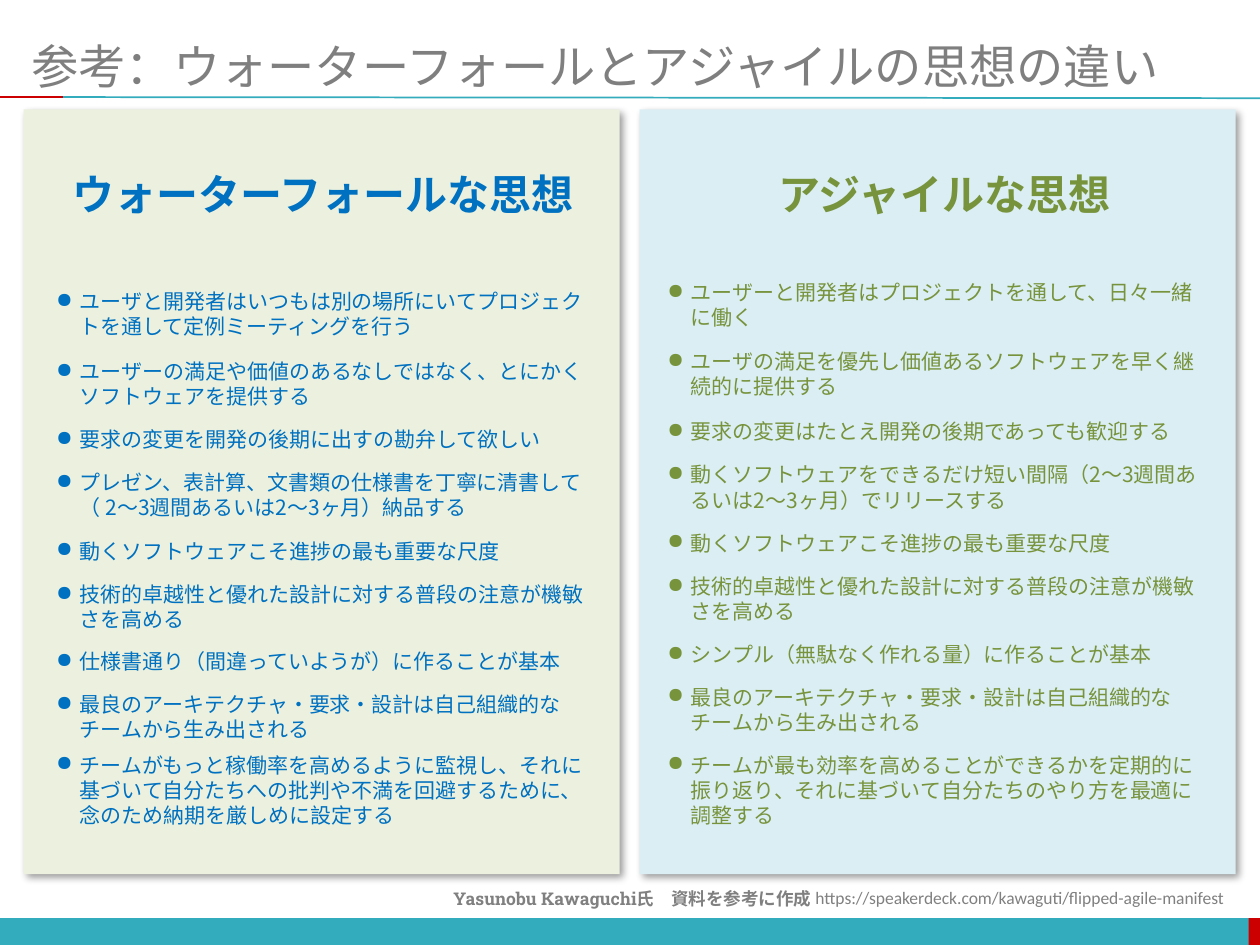
from dataclasses import dataclass

from lxml import etree
from pptx import Presentation
from pptx.dml.color import RGBColor
from pptx.enum import shapes, text
from pptx.oxml import ns
from pptx.util import Pt


@dataclass(frozen=True)
class Theme:
    teal: str = "33ACBD"
    red: str = "CC0000"
    title: str = "7F7F7F"
    source: str = "808080"
    waterfall: str = "0070C0"
    waterfall_fill: str = "EBF1DE"
    agile: str = "77933C"
    agile_fill: str = "DBEEF4"
    font: str = "Noto Sans CJK JP"
    title_size: float = 27
    heading_size: float = 24
    body_size: float = 12
    source_size: float = 10


T = Theme()
LEFT, CENTER, RIGHT = text.PP_ALIGN.LEFT, text.PP_ALIGN.CENTER, text.PP_ALIGN.RIGHT


def add_text(parent, box, words, size, color, font=T.font, bold=False,
             align=LEFT, wrap=True, bullet=False, spacing=1.2):
    sp = parent.add_textbox(*map(Pt, box))
    tf = sp.text_frame
    tf.word_wrap = wrap
    tf.text = words
    p = tf.paragraphs[0]
    p.alignment = align
    if spacing:
        p.line_spacing = Pt(spacing * size)
    if bullet:
        pPr = p._p.get_or_add_pPr()
        pPr.set("marL", str(Pt(13.5)))
        pPr.set("indent", str(-Pt(13.5)))
        etree.SubElement(pPr, ns.qn("a:buChar"), char="●")
    r = p.runs[0]
    r.font.size = Pt(size)
    r.font.bold = bold
    r.font.name = font
    r.font.color.rgb = RGBColor.from_string(color)
    etree.SubElement(r._r.get_or_add_rPr(), ns.qn("a:ea"), typeface=T.font)
    return tf


def add_rect(parent, box, color):
    sp = parent.add_shape(shapes.MSO_SHAPE.RECTANGLE, *map(Pt, box))
    sp.shadow.inherit = False
    sp.fill.solid()
    sp.fill.fore_color.rgb = RGBColor.from_string(color)
    sp.line.fill.background()
    return sp


prs = Presentation()
prs.slide_width, prs.slide_height = Pt(720), Pt(540)
s = prs.slides.add_slide(prs.slide_layouts[6])

# Footer band and the rule under the title
add_rect(s.shapes, (0, 524.7, 720, 15.5), T.teal)
add_rect(s.shapes, (713.5, 524.7, 6.5, 15.5), T.red)
for x1, x2, y2, color in ((36, 720, 56.1, T.teal), (0, 36, 55.5, T.red)):
    rule = s.shapes.add_connector(shapes.MSO_CONNECTOR.STRAIGHT,
                                  Pt(x1), Pt(55.5), Pt(x2), Pt(y2))
    rule.line.color.rgb = RGBColor.from_string(color)
    rule.line.width = Pt(1)
    etree.SubElement(rule._element.spPr, ns.qn("a:effectLst"))

tf = add_text(s.shapes, (18, 21, 684, 33), "参考：ウォーターフォールとアジャイルの思想の違い",
              T.title_size, T.title, spacing=None)
tf.margin_left = tf.margin_right = 0
tf.vertical_anchor = text.MSO_ANCHOR.MIDDLE

waterfall = [
    (161.3, "ユーザと開発者はいつもは別の場所にいてプロジェクトを通して定例ミーティングを行う"),
    (201.4, "ユーザーの満足や価値のあるなしではなく、とにかくソフトウェアを提供する"),
    (240.3, "要求の変更を開発の後期に出すの勘弁して欲しい"),
    (264.8, "プレゼン、表計算、文書類の仕様書を丁寧に清書して（ 2〜3週間あるいは2〜3ヶ月）納品する"),
    (304, "動くソフトウェアこそ進捗の最も重要な尺度"),
    (328.8, "技術的卓越性と優れた設計に対する普段の注意が機敏さを高める"),
    (367.3, "仕様書通り（間違っていようが）に作ることが基本"),
    (391.8, "最良のアーキテクチャ・要求・設計は自己組織的なチームから生み出される"),
    (426.3, "チームがもっと稼働率を高めるように監視し、それに基づいて自分たちへの批判や不満を"
            "回避するために、念のため納期を厳しめに設定する"),
]
agile = [
    (156.2, "ユーザーと開発者はプロジェクトを通して、日々一緒に働く"),
    (195.8, "ユーザの満足を優先し価値あるソフトウェアを早く継続的に提供する"),
    (235.6, "要求の変更はたとえ開発の後期であっても歓迎する"),
    (260.4, "動くソフトウェアをできるだけ短い間隔（2〜3週間あるいは2〜3ヶ月）でリリースする"),
    (299.5, "動くソフトウェアこそ進捗の最も重要な尺度"),
    (324.2, "技術的卓越性と優れた設計に対する普段の注意が機敏さを高める"),
    (363, "シンプル（無駄なく作れる量）に作ることが基本"),
    (387.4, "最良のアーキテクチャ・要求・設計は自己組織的なチームから生み出される"),
    (426.3, "チームが最も効率を高めることができるかを定期的に振り返り、それに基づいて自分たちの"
            "やり方を最適に調整する"),
]
panels = [
    (s.shapes, 13.5, 25, 184.5, "ウォーターフォールな思想", waterfall, T.waterfall, T.waterfall_fill),
    (s.shapes.add_group_shape().shapes, 365.5, 374.3, 539.6, "アジャイルな思想", agile, T.agile, T.agile_fill),
]
heading_width = 306
chars_per_line = 24
for parent, x, text_x, heading_mid, heading, items, color, fill in panels:
    panel = add_rect(parent, (x, 62.6, 340.6, 437), fill)
    effects = panel._element.spPr.find(ns.qn("a:effectLst"))
    shadow = etree.SubElement(effects, ns.qn("a:outerShdw"), blurRad=str(Pt(4)),
                              dist=str(Pt(3)), dir="2700000", algn="tl", rotWithShape="0")
    black = etree.SubElement(shadow, ns.qn("a:srgbClr"), val="000000")
    etree.SubElement(black, ns.qn("a:alpha"), val="40000")

    add_text(parent, (heading_mid - heading_width / 2, 92.9, heading_width, 36), heading,
             T.heading_size, color, bold=True, align=CENTER, wrap=False)
    for y, words in items:
        lines = -(-len(words) // chars_per_line)
        add_text(parent, (text_x, y, 318, 7.2 + 14.4 * lines), words,
                 T.body_size, color, bullet=True)

add_text(s.shapes, (440, 503.6, 266.3, 19.4),
         "https://speakerdeck.com/kawaguti/flipped-agile-manifest",
         T.source_size, T.source, font="Calibri", align=RIGHT)
add_text(s.shapes, (252, 504, 360, 19.4), "Yasunobu Kawaguchi氏　資料を参考に作成",
         T.source_size, T.source, font="Roboto Slab", bold=True)

prs.save("out.pptx")
